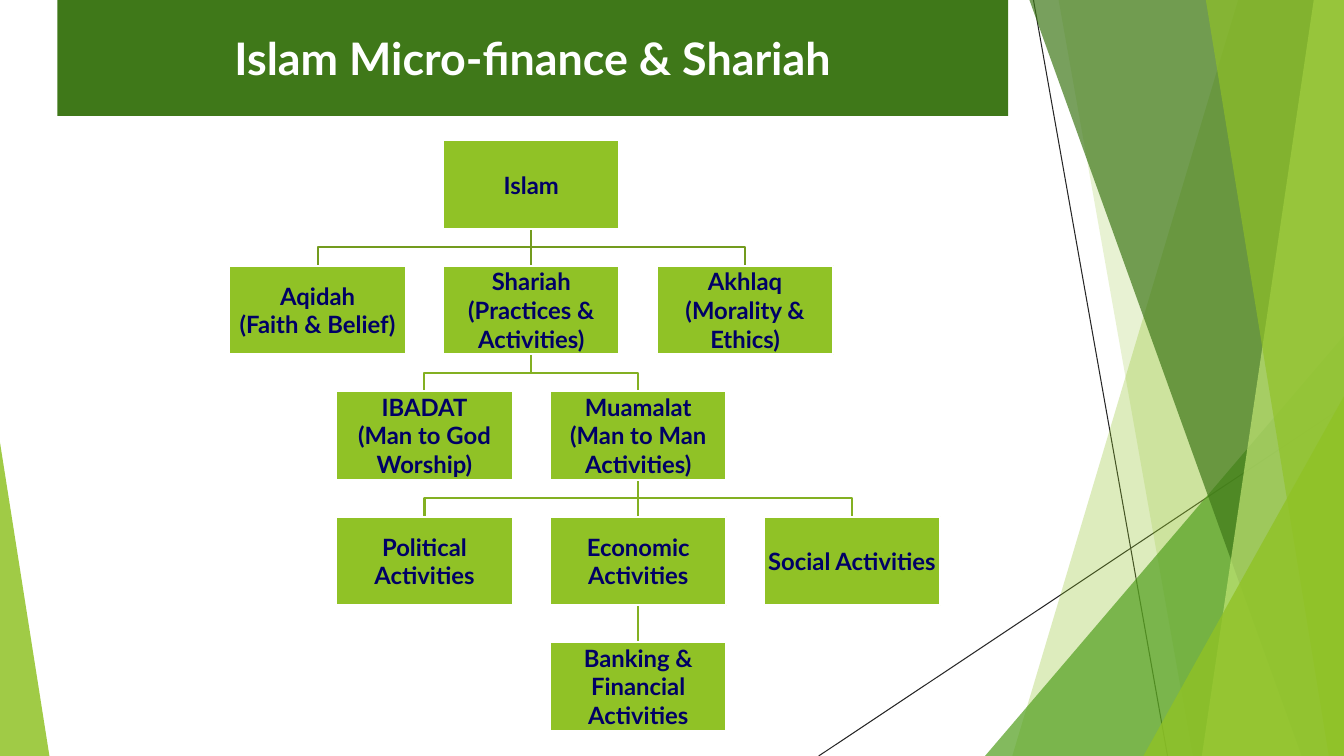
"""Builds a slide with a tree of Islam, Shariah and financial activities."""
import pptx
import pptx.util
import pptx.dml.color
import pptx.enum.shapes
import pptx.enum.text
import pptx.oxml
import pptx.oxml.ns
from pptx.util import Inches


def paint(color_format, color, opacity=100):
    color_format.solid()
    color_format.fore_color.rgb = pptx.dml.color.RGBColor.from_string(color)
    if opacity < 100:
        tint = color_format._xPr.find(".//" + pptx.oxml.ns.qn("a:srgbClr"))
        alpha = pptx.oxml.parse_xml(
            f'<a:alpha {pptx.oxml.ns.nsdecls("a")} val="{opacity * 1000}"/>')
        tint.append(alpha)


def draw_line(points, color, width):
    ends = [(Inches(x), Inches(y)) for x, y in points]
    if len(ends) == 2:
        line = slide.shapes.add_connector(
            pptx.enum.shapes.MSO_CONNECTOR.STRAIGHT, *ends[0], *ends[1])
        line._element.spPr.append(
            pptx.oxml.parse_xml(f'<a:effectLst {pptx.oxml.ns.nsdecls("a")}/>'))
    else:
        builder = slide.shapes.build_freeform(*ends[0])
        builder.add_line_segments(ends[1:], close=False)
        line = builder.convert_to_shape()
        line.shadow.inherit = False
        line.fill.background()
    paint(line.line.fill, color)
    line.line.width = pptx.util.Pt(width)
    return line


WIDTH, HEIGHT = 13.33, 7.5
GREEN, DARK_GREEN = "90C226", "3F7819"

deck = pptx.Presentation()
deck.slide_width, deck.slide_height = Inches(WIDTH), Inches(HEIGHT)
slide = deck.slides.add_slide(deck.slide_layouts[5])

title = slide.shapes.title
title.left, title.top = Inches(0.57), Inches(0)
title.width, title.height = Inches(9.43), Inches(1.15)
paint(title.fill, DARK_GREEN)
title.text_frame.text = "Islam Micro-finance & Shariah"
title.text_frame.auto_size = pptx.enum.text.MSO_AUTO_SIZE.NONE
title.text_frame.vertical_anchor = pptx.enum.text.MSO_ANCHOR.MIDDLE
heading = title.text_frame.paragraphs[0]
heading.alignment = pptx.enum.text.PP_ALIGN.CENTER
heading.font.name, heading.font.size = "Lato", pptx.util.Pt(32)
heading.font.bold = True
paint(heading.font.fill, "FFFFFF")

draw_line([(10.25, 0), (11.58, HEIGHT)], "262626", 0.75)
draw_line([(WIDTH, 4.03), (8.12, HEIGHT)], "262626", 0.75)

right_edge = [(WIDTH, 0), (WIDTH, HEIGHT)]
facets = [
    ([(12.28, 0), *right_edge, (10.04, HEIGHT)], GREEN, 30),
    ([(10.5, 0), *right_edge, (11.83, HEIGHT)], GREEN, 20),
    ([(9.77, HEIGHT), (WIDTH, 3.33), (WIDTH, HEIGHT)], "54A021", 72),
    ([(10.21, 0), *right_edge, (12.91, HEIGHT)], DARK_GREEN, 70),
    ([(13.03, 0), *right_edge, (11.92, HEIGHT)], "C0E474", 70),
    ([(11.96, 0), *right_edge, (13.18, HEIGHT)], GREEN, 65),
    ([(11.34, HEIGHT), (WIDTH, 3.93), (WIDTH, HEIGHT)], GREEN, 80),
    ([(0, 4.39), (0.49, HEIGHT), (0, HEIGHT)], GREEN, 85),
]
for corners, color, opacity in facets:
    if len(corners) == 3:
        xs, ys = zip(*corners)
        facet = slide.shapes.add_shape(
            pptx.enum.shapes.MSO_SHAPE.ISOSCELES_TRIANGLE,
            Inches(min(xs)), Inches(min(ys)),
            Inches(max(xs) - min(xs)), Inches(max(ys) - min(ys)))
        facet.adjustments[0] = 0 if min(xs) == 0 else 1
    else:
        points = [(Inches(x), Inches(y)) for x, y in corners]
        builder = slide.shapes.build_freeform(*points[0])
        builder.add_line_segments(points[1:])
        facet = builder.convert_to_shape()
    facet.shadow.inherit = False
    facet.line.fill.background()
    paint(facet.fill, color, opacity)

BOX_WIDTH, BOX_HEIGHT = 1.75, 0.88
FIRST_CENTER, HALF_COLUMN = 3.15, 1.06
FIRST_TOP, ROW_STEP = 1.39, 1.245

# name: (text, half columns from the left, row, parent)
topics = {
    "islam": ("Islam", 2, 0, None),
    "aqidah": ("Aqidah\n(Faith & Belief)", 0, 1, "islam"),
    "shariah": ("Shariah\n(Practices & Activities)", 2, 1, "islam"),
    "akhlaq": ("Akhlaq\n(Morality & Ethics)", 4, 1, "islam"),
    "ibadat": ("IBADAT\n(Man to God Worship)", 1, 2, "shariah"),
    "muamalat": ("Muamalat\n(Man to Man Activities)", 3, 2, "shariah"),
    "political": ("Political Activities", 1, 3, "muamalat"),
    "economic": ("Economic Activities", 3, 3, "muamalat"),
    "social": ("Social Activities", 5, 3, "muamalat"),
    "banking": ("Banking & Financial Activities", 3, 4, "economic"),
}

straight_links = []
for name, (text, column, row, parent) in topics.items():
    if parent is None:
        continue
    child_x = FIRST_CENTER + column * HALF_COLUMN
    parent_x = FIRST_CENTER + topics[parent][1] * HALF_COLUMN
    child_top = FIRST_TOP + row * ROW_STEP
    parent_bottom = child_top - ROW_STEP + BOX_HEIGHT
    middle = (parent_bottom + child_top) / 2
    route = [(parent_x, parent_bottom), (child_x, child_top)]
    if child_x != parent_x:
        route[1:1] = [(parent_x, middle), (child_x, middle)]
    link = draw_line(route, "739B1E" if row == 1 else "83B022", 1.5)
    if child_x == parent_x:
        straight_links.append((link, parent, name))

boxes = {}
for name, (text, column, row, parent) in topics.items():
    box = slide.shapes.add_shape(
        pptx.enum.shapes.MSO_SHAPE.RECTANGLE,
        Inches(FIRST_CENTER + column * HALF_COLUMN - BOX_WIDTH / 2),
        Inches(FIRST_TOP + row * ROW_STEP), Inches(BOX_WIDTH), Inches(BOX_HEIGHT))
    box.shadow.inherit = False
    paint(box.fill, GREEN)
    paint(box.line.fill, "FFFFFF")
    box.line.width = pptx.util.Pt(1.5)
    frame = box.text_frame
    frame.text = text
    frame.word_wrap = True
    frame.vertical_anchor = pptx.enum.text.MSO_ANCHOR.MIDDLE
    frame.margin_left = frame.margin_right = Inches(0.01)
    frame.margin_top = frame.margin_bottom = Inches(0.01)
    for paragraph in frame.paragraphs:
        paragraph.alignment = pptx.enum.text.PP_ALIGN.CENTER
        paragraph.font.name, paragraph.font.size = "Lato", pptx.util.Pt(17)
        paragraph.font.bold = True
        paint(paragraph.font.fill, "000066")
    boxes[name] = box

for link, parent, child in straight_links:
    link.begin_connect(boxes[parent], 2)
    link.end_connect(boxes[child], 0)

deck.save("out.pptx")
